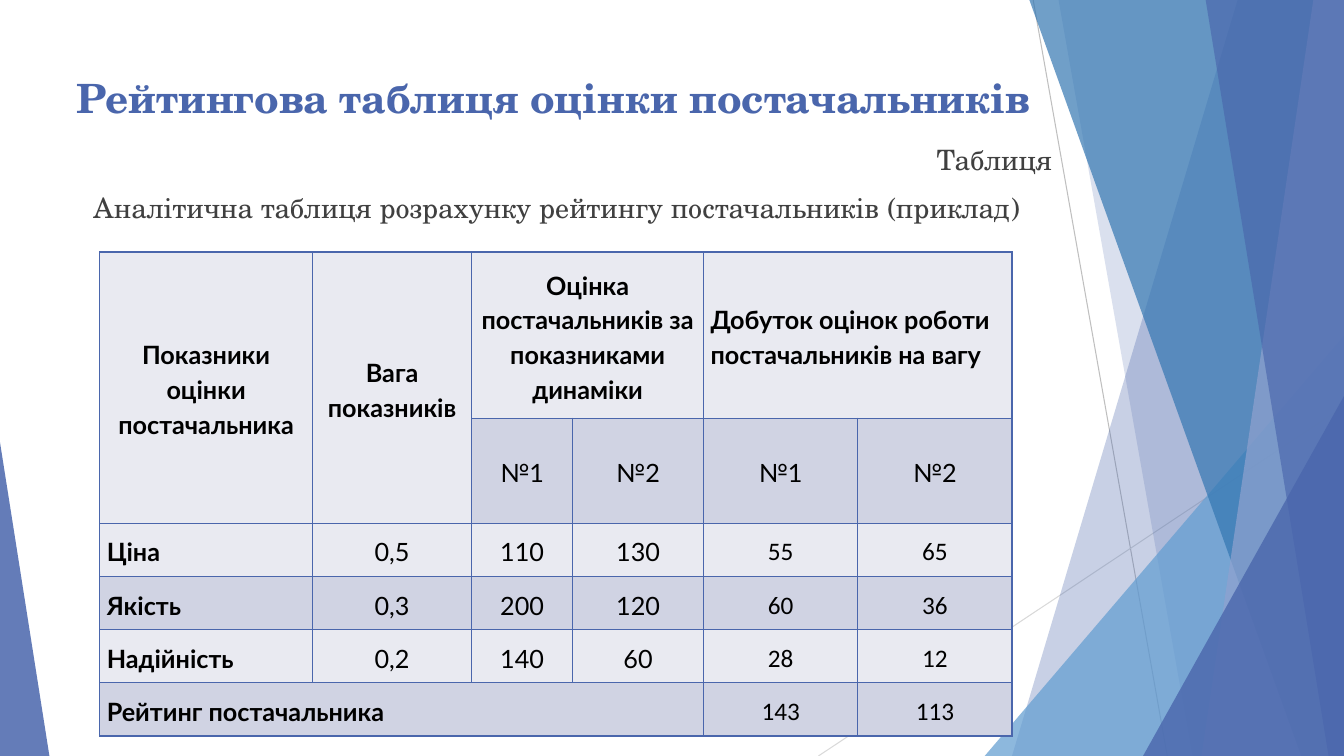
from lxml import etree
from pptx import Presentation
from pptx import util as u
from pptx.dml.color import RGBColor
from pptx.enum import shapes, text
from pptx.oxml import ns

INDIGO = RGBColor(0x4A, 0x66, 0xAC)
PALE_INDIGO = RGBColor(0x90, 0xA2, 0xCF)
SKY = RGBColor(0x62, 0x9D, 0xD1)
BLUE = RGBColor(0x34, 0x77, 0xB2)
GRAY = RGBColor(0xBF, 0xBF, 0xBF)
LIGHT_GRAY = RGBColor(0xD9, 0xD9, 0xD9)
DARK_GRAY = RGBColor(0x40, 0x40, 0x40)
BLACK = RGBColor(0, 0, 0)
BANDS = RGBColor(0xE9, 0xEA, 0xF1), RGBColor(0xD0, 0xD3, 0xE3)

WIDTH, HEIGHT = 960, 540
LEFT, CENTER, RIGHT = text.PP_ALIGN.LEFT, text.PP_ALIGN.CENTER, text.PP_ALIGN.RIGHT

COLUMN_WIDTHS = [151.9, 113.8, 72, 93.6, 110.2, 110.2]
ROW_HEIGHTS = [118.8, 75, 38, 38, 38, 38]
ROWS = [
    ["Показники\nоцінки постачальника", "Вага показників",
     "Оцінка постачальників за показниками динаміки", "",
     "Добуток оцінок роботи постачальників на вагу", ""],
    ["", "", "№1", "№2", "№1", "№2"],
    ["Ціна", "0,5", "110", "130", "55", "65"],
    ["Якість", "0,3", "200", "120", "60", "36"],
    ["Надійність", "0,2", "140", "60", "28", "12"],
    ["Рейтинг постачальника", "", "", "", "143", "113"],
]
MERGES = [((0, 0), (1, 0)), ((0, 1), (1, 1)), ((0, 2), (0, 3)),
          ((0, 4), (0, 5)), ((5, 0), (5, 3))]


class RatingSlide:
    heading_font = "TeX Gyre Schola"
    table_font = "Lato"
    score_font = "Calibri"

    def __init__(self, presentation):
        self.slide = presentation.slides.add_slide(presentation.slide_layouts[6])
        self.shapes = self.slide.shapes

    def line(self, start, end, color):
        connector = self.shapes.add_connector(
            shapes.MSO_CONNECTOR.STRAIGHT, *map(u.Pt, start + end))
        connector.line.color.rgb = color
        connector.line.width = u.Pt(0.75)
        etree.SubElement(connector._element.spPr, ns.qn("a:effectLst"))

    def paint(self, shape, color, opacity):
        shape.shadow.inherit = False
        shape.line.fill.background()
        shape.fill.solid()
        shape.fill.fore_color.rgb = color
        color_element = shape._element.spPr.find(".//" + ns.qn("a:srgbClr"))
        etree.SubElement(color_element, ns.qn("a:alpha"), val=str(opacity * 1000))

    def facet(self, top_x, bottom_x, color, opacity):
        """Fill from a slanted left edge to the right side of the slide."""
        corners = [(top_x, -0.6), (WIDTH, -0.6), (WIDTH, HEIGHT), (bottom_x, HEIGHT)]
        points = [(u.Pt(x), u.Pt(y)) for x, y in corners]
        builder = self.shapes.build_freeform(*points[0])
        builder.add_line_segments(points[1:], close=True)
        self.paint(builder.convert_to_shape(), color, opacity)

    def triangle(self, left, top, width, apex, color, opacity):
        """Stand a triangle on the bottom edge of the slide."""
        shape = self.shapes.add_shape(
            shapes.MSO_SHAPE.ISOSCELES_TRIANGLE,
            *map(u.Pt, (left, top, width, HEIGHT - top)))
        shape.adjustments[0] = apex
        self.paint(shape, color, opacity)

    def style(self, paragraph, font, size, color, alignment, bold=False):
        paragraph.alignment = alignment
        paragraph.font.name = font
        paragraph.font.size = u.Pt(size)
        paragraph.font.color.rgb = color
        paragraph.font.bold = bold

    def text_box(self, box, lines, size, color, bold=False, space_before=0):
        """Write (wording, alignment) lines into a wrapped box."""
        frame = self.shapes.add_textbox(*map(u.Pt, box)).text_frame
        frame.word_wrap = True
        frame.text = "\n".join(wording for wording, _ in lines)
        for paragraph, (_, alignment) in zip(frame.paragraphs, lines):
            self.style(paragraph, self.heading_font, size, color, alignment, bold)
            paragraph.space_before = u.Pt(space_before)

    def border(self, cell, color):
        properties = cell._tc.get_or_add_tcPr()
        for side in ("lnL", "lnR", "lnT", "lnB"):
            edge = etree.SubElement(properties, ns.qn("a:" + side), w=str(u.Pt(1)))
            fill = etree.SubElement(edge, ns.qn("a:solidFill"))
            etree.SubElement(fill, ns.qn("a:srgbClr"), val=str(color))

    def cell(self, cell, wording, row, column):
        cell.margin_left = cell.margin_right = u.Pt(5)
        cell.margin_top = cell.margin_bottom = 0
        cell.vertical_anchor = text.MSO_ANCHOR.MIDDLE
        self.border(cell, INDIGO)
        cell.fill.solid()
        cell.fill.fore_color.rgb = BANDS[row % 2]
        cell.text = wording
        font = self.score_font if row > 1 and column > 3 else self.table_font
        row_label = row > 1 and column == 0
        product_heading = row == 0 and column == 4
        alignment = LEFT if row_label or product_heading else CENTER
        for paragraph in cell.text_frame.paragraphs:
            self.style(paragraph, font, 18, BLACK, alignment, row == 0 or row_label)
            paragraph.line_spacing = 1.15

    def table(self, left, top, rows, merges):
        table = self.shapes.add_table(
            len(rows), len(COLUMN_WIDTHS), u.Pt(left), u.Pt(top),
            u.Pt(sum(COLUMN_WIDTHS)), u.Pt(sum(ROW_HEIGHTS))).table
        table.first_row = table.horz_banding = False
        for column, width in zip(table.columns, COLUMN_WIDTHS):
            column.width = u.Pt(width)
        for row, height in zip(table.rows, ROW_HEIGHTS):
            row.height = u.Pt(height)
        for row, wordings in enumerate(rows):
            for column, wording in enumerate(wordings):
                self.cell(table.cell(row, column), wording, row, column)
        for first, last in merges:
            table.cell(*first).merge(table.cell(*last))


def main():
    presentation = Presentation()
    presentation.slide_width = u.Pt(WIDTH)
    presentation.slide_height = u.Pt(HEIGHT)
    rating = RatingSlide(presentation)

    rating.line((738, 0), (833.8, HEIGHT), GRAY)
    rating.line((WIDTH, 290.2), (584.6, HEIGHT), LIGHT_GRAY)
    rating.facet(884.2, 722.9, INDIGO, 30)
    rating.facet(756, 851.8, INDIGO, 20)
    rating.triangle(703.4, 239.8, 256.6, 1, SKY, 72)
    rating.facet(735.1, 929.5, BLUE, 70)
    rating.facet(938.2, 858.2, PALE_INDIGO, 70)
    rating.facet(861.1, 949, INDIGO, 65)
    rating.triangle(816.5, 283, 143.5, 1, INDIGO, 80)
    rating.triangle(0, 316, 35.3, 0, INDIGO, 85)

    rating.text_box((47.5, 49, 717.8, 48.2),
                    [("Рейтингова таблиця оцінки постачальників", LEFT)],
                    28.8, INDIGO, bold=True)
    rating.text_box((31, 98.6, 733, 80),
                    [("Таблиця ", RIGHT),
                     ("Аналітична таблиця розрахунку рейтингу постачальників (приклад)",
                      CENTER)],
                    20, DARK_GRAY, space_before=10)
    rating.table(71.3, 180, ROWS, MERGES)
    presentation.save("out.pptx")


if __name__ == "__main__":
    main()
